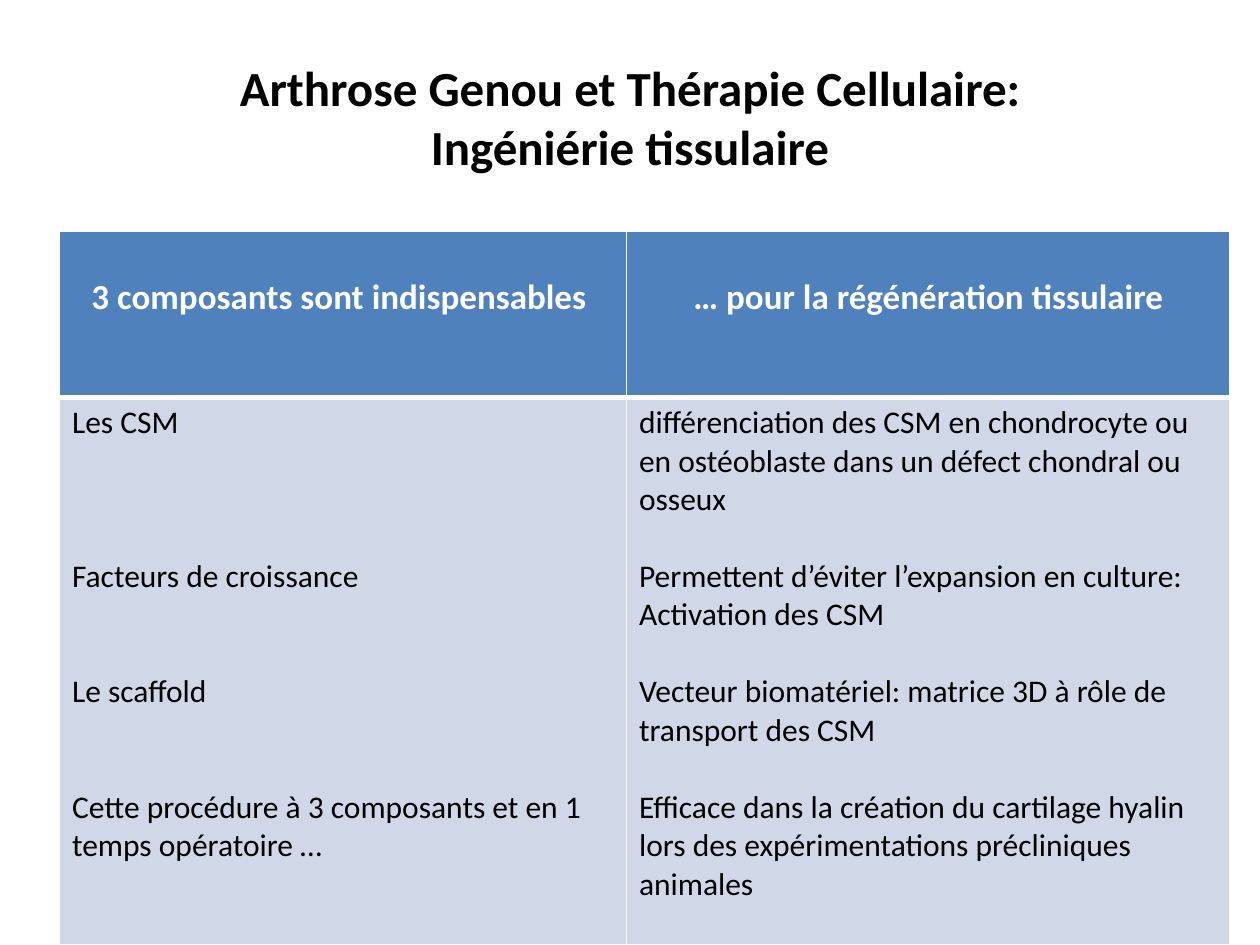
from dataclasses import dataclass

from lxml.etree import SubElement
from pptx import Presentation
from pptx.dml.color import RGBColor
from pptx.enum.text import MSO_ANCHOR, PP_ALIGN
from pptx.oxml.ns import qn
from pptx.util import Pt


@dataclass(frozen=True)
class Theme:
    font: str = "Calibri"
    title_size: int = 28
    header_size: int = 20
    body_size: int = 18
    ink: str = "000000"
    paper: str = "FFFFFF"
    header_fill: str = "4F81BD"
    body_fill: str = "D0D8E8"
    line: float = 22  # height of one body line


class SlideBuilder:
    def __init__(self, page, theme):
        self.page = page
        self.theme = theme

    def add_span(self, para, text, size, color, bold=False):
        span = para.add_run()
        span.text = text
        span.font.name = self.theme.font
        span.font.size = Pt(size)
        span.font.bold = bold
        span.font.color.rgb = RGBColor.from_string(color)

    def add_title(self, lines, left, top, width, height):
        box = self.page.shapes.title
        box.left, box.top, box.width, box.height = map(Pt, (left, top, width, height))
        frame = box.text_frame
        frame.word_wrap = True
        frame.vertical_anchor = MSO_ANCHOR.MIDDLE
        para = frame.paragraphs[0]
        para.alignment = PP_ALIGN.CENTER
        for index, line in enumerate(lines):
            if index:
                para.add_line_break()
            self.add_span(para, line, self.theme.title_size, self.theme.ink, True)

    def add_table(self, left, top, widths, heights):
        table = self.page.shapes.add_table(
            len(heights), len(widths), Pt(left), Pt(top), Pt(sum(widths)), Pt(sum(heights))
        ).table
        for column, width in zip(table.columns, widths):
            column.width = Pt(width)
        for row, height in zip(table.rows, heights):
            row.height = Pt(height)
        return table

    def set_borders(self, cell, **widths):
        properties = cell._tc.get_or_add_tcPr()
        for side in "LRTB":
            line = SubElement(properties, qn(f"a:ln{side}"), w=str(Pt(widths.get(side, 1))))
            fill = SubElement(line, qn("a:solidFill"))
            SubElement(fill, qn("a:srgbClr"), val=self.theme.paper)

    def set_fill(self, cell, color):
        cell.fill.solid()
        cell.fill.fore_color.rgb = RGBColor.from_string(color)

    def fill_header(self, cell, text):
        self.set_borders(cell, B=3)
        self.set_fill(cell, self.theme.header_fill)
        cell.margin_top = Pt(3.6 + self.theme.line)
        para = cell.text_frame.paragraphs[0]
        para.alignment = PP_ALIGN.CENTER
        self.add_span(para, text, self.theme.header_size, self.theme.paper, True)

    def fill_body(self, cell, entries):
        """Each entry is a text and the number of lines left free above it."""
        self.set_borders(cell, T=3)
        self.set_fill(cell, self.theme.body_fill)
        frame = cell.text_frame
        for index, (text, gap) in enumerate(entries):
            para = frame.add_paragraph() if index else frame.paragraphs[0]
            if gap:
                para.space_before = Pt(gap * self.theme.line)
            self.add_span(para, text, self.theme.body_size, self.theme.ink)


HEADERS = ["3 composants sont indispensables ", "… pour la régénération tissulaire"]
COMPONENTS = [
    ("Les CSM", 0),
    ("Facteurs de croissance", 3),
    ("Le scaffold", 2),
    ("Cette procédure à 3 composants et en 1 temps opératoire …", 2),
]
ROLES = [
    ("différenciation des CSM en chondrocyte ou en ostéoblaste dans un défect chondral ou osseux", 0),
    ("Permettent d’éviter l’expansion en culture:", 1),
    ("Activation des CSM", 0),
    ("Vecteur biomatériel: matrice 3D à rôle de transport des CSM", 1),
    ("Efficace dans la création du cartilage hyalin lors des expérimentations précliniques animales", 1),
]


def main():
    deck = Presentation()
    deck.slide_width, deck.slide_height = Pt(720), Pt(540)
    page = deck.slides.add_slide(deck.slide_layouts[5])
    builder = SlideBuilder(page, Theme())

    # Title
    builder.add_title(
        ["Arthrose Genou et Thérapie Cellulaire:", "Ingéniérie tissulaire"], 36, 21.6, 648, 90
    )

    # Components and their roles
    table = builder.add_table(34, 132, widths=[324, 345], heights=[95, 313])
    for column, (header, entries) in enumerate(zip(HEADERS, [COMPONENTS, ROLES])):
        builder.fill_header(table.cell(0, column), header)
        builder.fill_body(table.cell(1, column), entries)

    deck.save("out.pptx")


if __name__ == "__main__":
    main()
